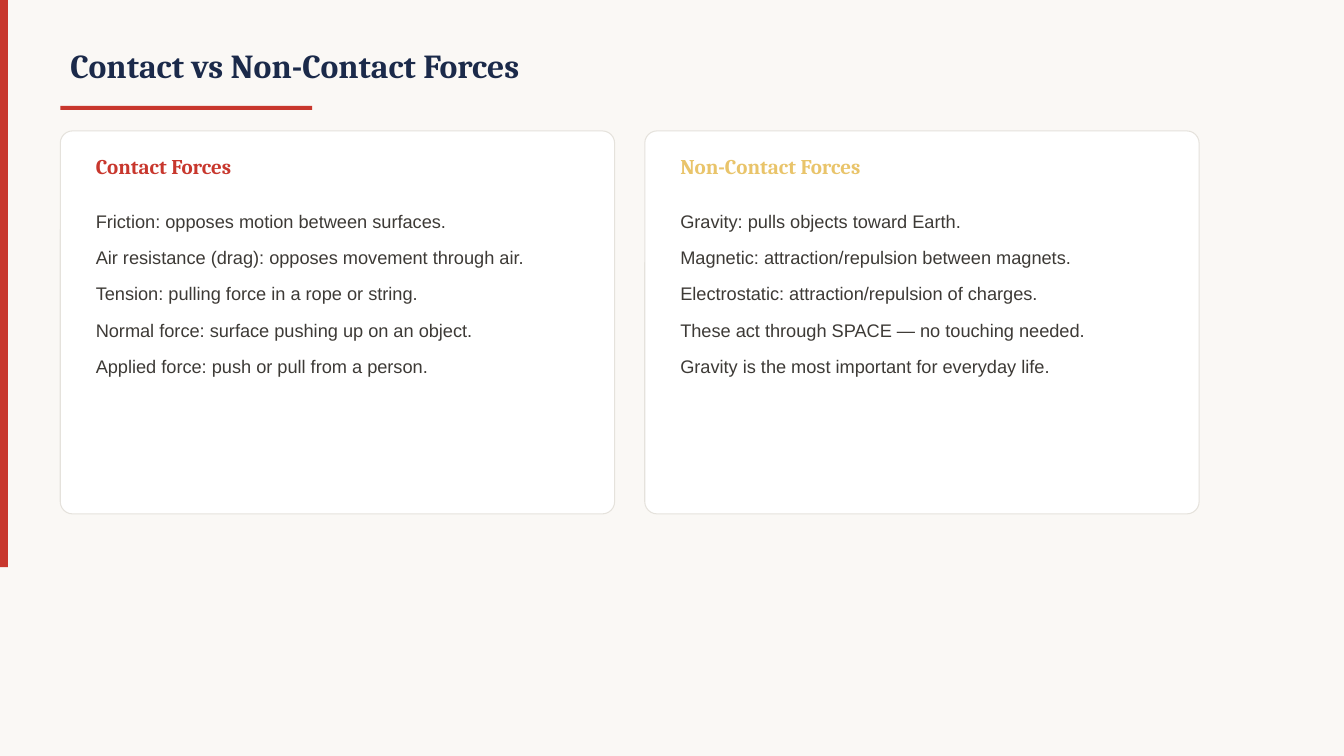
import pptx
import pptx.util
import pptx.dml.color
import pptx.enum.shapes
import pptx.enum.text
import pptx.oxml.ns
import lxml.etree

Cm, Pt = pptx.util.Cm, pptx.util.Pt
RGB = pptx.dml.color.RGBColor
Kind = pptx.enum.shapes.MSO_SHAPE
Anchor = pptx.enum.text.MSO_ANCHOR
Align = pptx.enum.text.PP_ALIGN

TITLE = "Contact vs Non-Contact Forces"
CARDS = [
    ("Contact Forces", "red", [
        "Friction: opposes motion between surfaces.",
        "Air resistance (drag): opposes movement through air.",
        "Tension: pulling force in a rope or string.",
        "Normal force: surface pushing up on an object.",
        "Applied force: push or pull from a person.",
    ]),
    ("Non-Contact Forces", "gold", [
        "Gravity: pulls objects toward Earth.",
        "Magnetic: attraction/repulsion between magnets.",
        "Electrostatic: attraction/repulsion of charges.",
        "These act through SPACE — no touching needed.",
        "Gravity is the most important for everyday life.",
    ]),
]
COLORS = {
    "paper": "FAF8F5", "red": "C8372D", "gold": "E9C46A", "navy": "1B2A4A",
    "ink": "3D3A36", "white": "FFFFFF", "edge": "E5E2DC",
}

LEFT, TOP = 1.52, 3.3
WIDTH, HEIGHT, GAP = 13.97, 9.65, 0.76
PAD = 0.64


def color(name):
    return RGB.from_string(COLORS[name])


def draw(slide, kind, box, fill, edge=None):
    shape = slide.shapes.add_shape(kind, *map(Cm, box))
    shape.shadow.inherit = False
    shape.fill.solid()
    shape.fill.fore_color.rgb = color(fill)
    if edge:
        shape.line.color.rgb = color(edge)
        shape.line.width = Pt(0.75)
    else:
        shape.line.fill.background()
    return shape


def write(holder, box, text, size=13, font="Arial", tint="ink", bold=False,
          anchor=Anchor.MIDDLE, line=1, after=0):
    """Place a placeholder in front and fill it with a string or list of lines."""
    holder.left, holder.top, holder.width, holder.height = map(Cm, box)
    holder.element.getparent().append(holder.element)
    frame = holder.text_frame
    frame.text = text if isinstance(text, str) else "\n".join(text)
    frame.word_wrap = True
    frame.auto_size = pptx.enum.text.MSO_AUTO_SIZE.NONE
    frame.vertical_anchor = anchor
    for para in frame.paragraphs:
        para.alignment = Align.LEFT
        para.line_spacing = line
        para.space_before, para.space_after = Pt(0), Pt(after)
        props = para._p.get_or_add_pPr()
        props.set("marL", "0")
        props.set("indent", "0")
        lxml.etree.SubElement(props, pptx.oxml.ns.qn("a:buNone"))
        for run in para.runs:
            run.font.size, run.font.name, run.font.bold = Pt(size), font, bold
            run.font.color.rgb = color(tint)


def main():
    deck = pptx.Presentation()
    deck.slide_width, deck.slide_height = Cm(33.87), Cm(19.05)
    slide = deck.slides.add_slide(deck.slide_layouts.get_by_name("Comparison"))
    slide.background.fill.solid()
    slide.background.fill.fore_color.rgb = color("paper")
    title, *parts = slide.placeholders

    draw(slide, Kind.RECTANGLE, (0, 0, 0.2, 14.29), "red")
    write(title, (LEFT, 0.76, 25.4, 1.78), TITLE,
          size=24, font="Cambria", tint="navy", bold=True)
    draw(slide, Kind.RECTANGLE, (LEFT, 2.67, 6.35, 0.1), "red")

    for i, (head, tint, lines) in enumerate(CARDS):
        left = LEFT + i * (WIDTH + GAP)
        card = draw(slide, Kind.ROUNDED_RECTANGLE,
                    (left, TOP, WIDTH, HEIGHT), "white", "edge")
        card.adjustments[0] = 0.032
        inner, wide = left + PAD, WIDTH - 2 * PAD
        label, body = parts[2 * i:2 * i + 2]
        write(label, (inner, TOP + 0.38, wide, 1.02), head,
              size=15, font="Cambria", tint=tint, bold=True)
        write(body, (inner, TOP + 1.65, wide, 7.37), lines,
              anchor=Anchor.TOP, line=1.4, after=4)

    deck.save("out.pptx")


if __name__ == "__main__":
    main()
